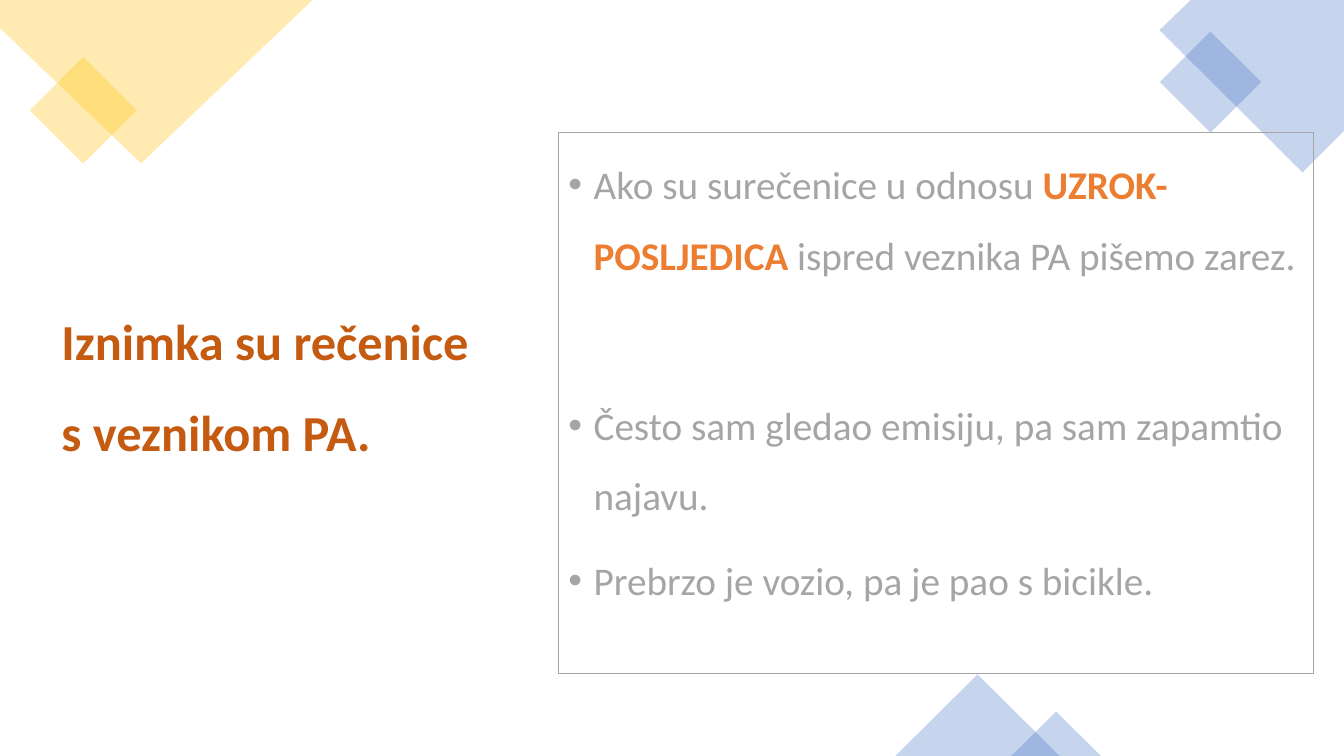
from lxml.etree import SubElement
from pptx import Presentation
from pptx.dml.color import RGBColor
from pptx.enum.shapes import MSO_SHAPE
from pptx.enum.text import MSO_ANCHOR, PP_ALIGN
from pptx.oxml.ns import qn
from pptx.util import Inches, Pt

GOLD, BLUE, GRAY, RUST, ORANGE = "FFC000", "4472C4", "A5A5A5", "C55A11", "ED7D31"


def color(code):
    """Turn a hex string into a colour."""
    return RGBColor.from_string(code)


class Deck:
    """Holds the style and the current slide; lengths are percent of its size."""

    font = "Calibri"
    alpha = 30
    spacing = 1.5

    def __init__(self):
        """Open a blank wide slide."""
        self.show = Presentation()
        self.show.slide_width = Inches(13.33)
        self.show.slide_height = Inches(7.5)
        self.slide = self.show.slides.add_slide(self.show.slide_layouts[6])

    def point(self, x, y):
        """Convert percent shares to slide lengths."""
        return (round(self.show.slide_width * x / 100),
                round(self.show.slide_height * y / 100))

    def tint(self, shape, code):
        """Give a shape a clear fill without outline or shadow."""
        shape.shadow.inherit = False
        shape.line.fill.background()
        shape.fill.solid()
        shape.fill.fore_color.rgb = color(code)
        tone = shape._element.spPr.find(qn("a:solidFill"))[0]
        SubElement(tone, qn("a:alpha"), val=str(self.alpha * 1000))

    def shape(self, kind, x, y, wide, high, code, turn=0):
        """Add a tinted preset shape."""
        item = self.slide.shapes.add_shape(
            kind, *self.point(x, y), *self.point(wide, high))
        item.rotation = turn
        self.tint(item, code)

    def outline(self, spots, code):
        """Add a tinted polygon."""
        first, *rest = [self.point(*spot) for spot in spots]
        pen = self.slide.shapes.build_freeform(*first)
        pen.add_line_segments(rest, close=True)
        self.tint(pen.convert_to_shape(), code)

    def box(self, x, y, wide, high, edge=None):
        """Add a wrapped text box and return its frame."""
        item = self.slide.shapes.add_textbox(
            *self.point(x, y), *self.point(wide, high))
        if edge:
            item.line.color.rgb = color(edge)
            item.line.width = Pt(0.75)
        frame = item.text_frame
        frame.word_wrap = True
        frame.vertical_anchor = MSO_ANCHOR.TOP
        return frame

    def text(self, para, runs, size, before=0, bullet=False):
        """Fill a paragraph run by run."""
        para.alignment = PP_ALIGN.LEFT
        para.line_spacing = self.spacing
        para.space_before = Pt(before)
        if bullet:
            props = para._p.get_or_add_pPr()
            props.set("marL", str(Inches(0.25)))
            props.set("indent", str(-Inches(0.25)))
            SubElement(props, qn("a:buFont"), typeface="Arial")
            SubElement(props, qn("a:buChar"), char="•")
        for words, code, bold in runs:
            run = para.add_run()
            run.text = words
            run.font.name = self.font
            run.font.size = Pt(size)
            run.font.bold = bold
            run.font.color.rgb = color(code)


def main():
    """Build and save the slide."""
    deck = Deck()
    title = deck.box(3.83, 36.4, 32.48, 35.47)
    deck.text(title.paragraphs[0],
              [("Iznimka su rečenice s veznikom PA.", RUST, True)], 36)

    square, peak = MSO_SHAPE.RECTANGLE, MSO_SHAPE.ISOSCELES_TRIANGLE
    deck.shape(square, 3.38, 9.6, 5.63, 10, GOLD, 45)
    deck.outline([(0, 0), (23.26, 0), (10.5, 21.6), (0, 3.73)], GOLD)
    deck.outline([(88.6, 0), (100, 0), (100, 17.33), (96.92, 22.8),
                  (86.27, 4)], BLUE)
    deck.shape(square, 87.4, 6.13, 5.33, 9.47, BLUE, 45)

    body = deck.box(41.56, 17.47, 56.19, 71.6, GRAY)
    items = [
        (10, [("Ako su surečenice u odnosu ", GRAY, False),
              ("UZROK-POSLJEDICA", ORANGE, True),
              (" ispred veznika PA pišemo zarez.", GRAY, False)]),
        (71, [("Često sam gledao emisiju, pa sam zapamtio najavu.", GRAY, False)]),
        (10, [("Prebrzo je vozio, pa je pao s bicikle.", GRAY, False)]),
    ]
    for rank, (before, runs) in enumerate(items):
        para = body.add_paragraph() if rank else body.paragraphs[0]
        deck.text(para, runs, 28, before, True)

    deck.shape(peak, 66.62, 89.2, 12.23, 10.8, BLUE)
    deck.shape(peak, 75.24, 94.13, 6.68, 5.87, BLUE)
    deck.show.save("out.pptx")


if __name__ == "__main__":
    main()
